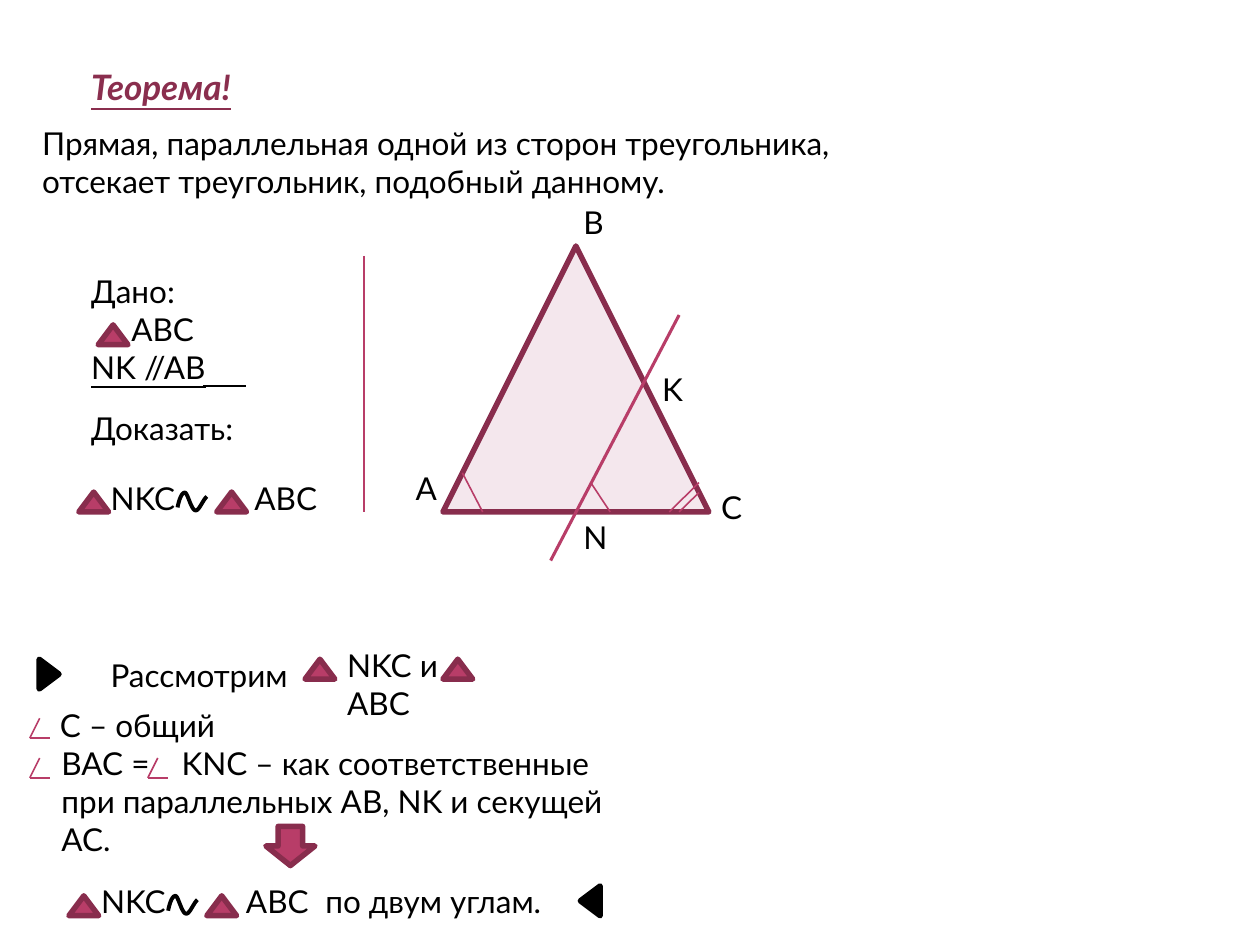
"""Build the slide with the theorem on a line parallel to a triangle's side."""
from lxml import etree
from pptx import Presentation
from pptx.dml.color import RGBColor
from pptx.enum import shapes, text
from pptx.oxml import ns
from pptx.util import Cm, Pt

COLORS = {"rose": "B83D68", "wine": "882D4D", "title": "8A2E4E", "pale": "F4E7ED", "black": "000000"}
RGB = {name: RGBColor.from_string(value) for name, value in COLORS.items()}
BODY = {"name": "Lato", "size": Pt(18)}
TITLE = {"name": "Lato", "size": Pt(20), "bold": True, "italic": True, "underline": True}
TRIANGLE = shapes.MSO_SHAPE.ISOSCELES_TRIANGLE

prs = Presentation()
prs.slide_width, prs.slide_height = Cm(25.4), Cm(19.05)
s = prs.slides.add_slide(prs.slide_layouts[6])


def add_shape(kind, x, y, w, h, fill="rose", line="wine", rotation=0):
    sp = s.shapes.add_shape(kind, Cm(x), Cm(y), Cm(w), Cm(h))
    sp.shadow.inherit = False
    sp.fill.solid()
    sp.fill.fore_color.rgb = RGB[fill]
    sp.line.color.rgb = RGB[line]
    sp.line.width = Pt(3.15)
    sp.rotation = rotation


def add_text(x, y, w, h, *paragraphs, font=BODY, color="black"):
    tf = s.shapes.add_textbox(Cm(x), Cm(y), Cm(w), Cm(h)).text_frame
    frame = {"word_wrap": True, "auto_size": text.MSO_AUTO_SIZE.SHAPE_TO_FIT_TEXT}
    for key, value in frame.items():
        setattr(tf, key, value)
    for i, (words, opts) in enumerate(paragraphs):
        p = tf.add_paragraph() if i else tf.paragraphs[0]
        r = p.add_run()
        r.text = words
        for key, value in {**font, **opts.get("font", {})}.items():
            setattr(r.font, key, value)
        r.font.color.rgb = RGB[color]
        pPr = p._p.get_or_add_pPr()
        if "indent" in opts:
            pPr.set("marL", str(Cm(opts["indent"])))
        if "tabs" in opts:
            tabs = etree.SubElement(pPr, ns.qn("a:tabLst"))
            for pos in opts["tabs"]:
                etree.SubElement(tabs, ns.qn("a:tab"), pos=str(Cm(pos)), algn="l")


add_shape(TRIANGLE, 8.93, 4.96, 5.36, 5.36, fill="pale")
add_shape(TRIANGLE, 1.98, 6.55, 0.6, 0.4)
for x, y in [(1.59, 9.92), (6.15, 13.29), (1.39, 18.06)]:
    for dx in (0, 2.78):
        add_shape(TRIANGLE, x + dx, y, 0.6, 0.4)
for x, y, rotation in [(0.69, 13.39, 90), (11.6, 17.96, 270)]:
    add_shape(TRIANGLE, x, y, 0.6, 0.4, "black", "black", rotation)
add_shape(shapes.MSO_SHAPE.DOWN_ARROW, 5.36, 16.66, 0.99, 0.79)

lines = [
    (7.34, 5.16, 7.34, 10.32, 0.9, "rose"),
    (13.69, 6.35, 11.1, 11.3, 1.75, "rose"),
    (9.32, 9.53, 9.73, 10.32, 0.9, "rose"),
    (11.91, 9.73, 12.3, 10.32, 0.9, "rose"),
    (14.09, 9.93, 13.69, 10.32, 0.9, "rose"),
    (14.09, 9.73, 13.49, 10.32, 0.9, "rose"),
    (4.1, 7.79, 4.95, 7.79, 1.1, "black"),
]
for x, y in [(0.6, 14.88), (0.6, 15.68), (2.98, 15.68)]:
    lines += [(x + 0.2, y - 0.4, x, y, 0.9, "rose"), (x, y, x + 0.4, y, 0.9, "rose")]
for x1, y1, x2, y2, width, color in lines:
    c = s.shapes.add_connector(shapes.MSO_CONNECTOR.STRAIGHT, Cm(x1), Cm(y1), Cm(x2), Cm(y2))
    c.line.color.rgb = RGB[color]
    c.line.width = Pt(width)
    etree.SubElement(c._element.spPr, ns.qn("a:effectLst"))

wave = [(0, 0.3), (0.03, 0.15), (0.08, 0), (0.15, 0), (0.2, 0), (0.28, 0.36),
        (0.36, 0.36), (0.43, 0.38), (0.51, 0.15), (0.59, 0.08)]
curve = []
for i in (0, 3, 6):
    for t in [n / 10 for n in range(1, 11)]:
        weights = ((1 - t) ** 3, 3 * t * (1 - t) ** 2, 3 * t * t * (1 - t), t ** 3)
        curve.append([sum(k * pt[axis] for k, pt in zip(weights, wave[i:i + 4])) for axis in (0, 1)])
for x, y in [(3.58, 9.93), (3.39, 18.06)]:
    fb = s.shapes.build_freeform(Cm(x), Cm(y + wave[0][1]))
    fb.add_line_segments([(Cm(x + dx), Cm(y + dy)) for dx, dy in curve], close=False)
    sp = fb.convert_to_shape()
    sp.shadow.inherit = False
    sp.fill.background()
    sp.line.color.rgb = RGB["black"]
    sp.line.width = Pt(2.25)

add_text(1.59, 1.19, 5.77, 1.11, ("Теорема!", {}), font=TITLE, color="title")
add_text(0.6, 2.38, 18.06, 1.8,
         ("Прямая, параллельная одной из сторон треугольника, отсекает треугольник, подобный данному.", {}))
add_text(1.59, 5.36, 6.35, 2.56, ("Дано:", {}), ("АВС", {"indent": 0.81}),
         ("NK //AB", {"font": {"underline": True}}))
add_text(1.59, 8.13, 4.76, 1.8, ("Доказать:", {}))
add_text(1.98, 9.53, 7.94, 1.03, ("NKC\tABC", {"tabs": [2.9]}))
for name, x, y, w in [("A", 8.13, 9.33, 0.79), ("B", 11.51, 3.97, 1.4), ("C", 14.29, 9.72, 0.79),
                      ("K", 13.1, 7.34, 0.79), ("N", 11.51, 10.32, 1)]:
    add_text(x, y, w, 1.03, (name, {}))
add_text(1.98, 13.1, 4.96, 1.03, ("Рассмотрим", {}))
add_text(6.75, 12.9, 4.46, 1.8, ("NKC и", {}), ("ABC", {}))
add_text(0.79, 14.1, 6.75, 1.03, ("С – общий", {"indent": 0.17}))
add_text(0.99, 14.88, 12.3, 1.8,
         ("BAC =\tKNC – как соответственные при параллельных AB, NK и секущей AC.", {"tabs": [2.42]}))
add_text(1.79, 17.66, 9.54, 1.03, ("NKC\tABC\tпо двум углам.", {"tabs": [2.92, 4.52]}))

prs.save("out.pptx")
